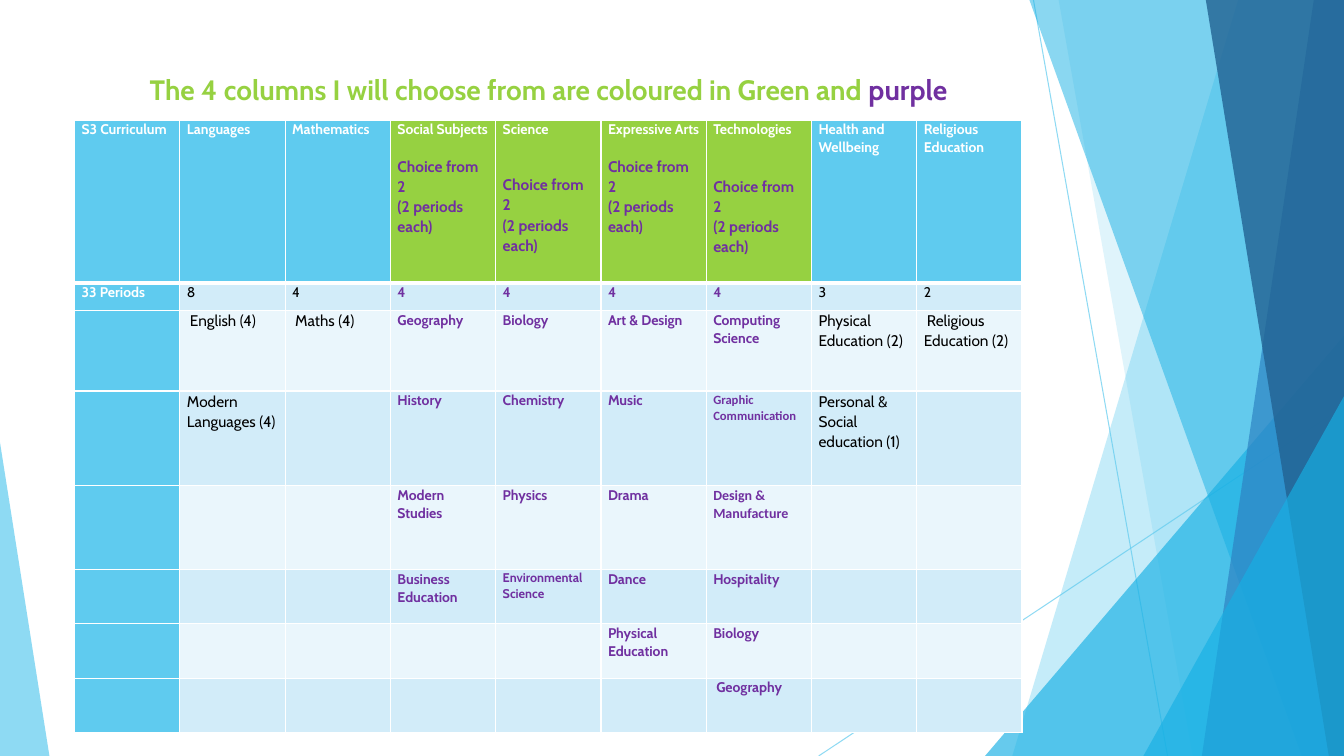
from dataclasses import dataclass

from lxml import etree
from pptx import Presentation
from pptx import util as u
from pptx.dml.color import RGBColor
from pptx.enum import shapes, text
from pptx.oxml.ns import qn

PX = 9144  # EMU per px, 100 px to the inch
SLIDE_W, SLIDE_H = 1333, 750


@dataclass(frozen=True)
class Theme:
    font: str = "Cabin"
    alt_font: str = "Calibri"
    white: str = "FFFFFF"
    black: str = "000000"
    sky: str = "5FCBEF"
    cyan: str = "17B0E4"
    blue: str = "2E83C3"
    navy: str = "226292"
    green: str = "96D141"
    purple: str = "7030A0"
    bands: tuple = ("EAF6FC", "D2ECF9")
    title: int = 20
    body: int = 11
    label: int = 10
    small: int = 9
    spacing: float = 1.07


T = Theme()

LINES = [((1025, 0), (1158, 750)), ((1333, 403), (812, 750))]
# Right-hand panels: top-left x, bottom-left x, colour, opacity in percent
PANELS_BACK = [(1228, 1004, T.sky, 36), (1050, 1183, T.sky, 20)]
PANELS_FRONT = [(1021, 1291, T.cyan, 50), (1303, 1192, T.blue, 70),
                (1196, 1318, T.navy, 80)]

ROW_HEIGHTS = [162, 27, 80, 94, 83, 54, 54, 54]
CHOICE_COLS = range(3, 7)
HEADINGS = ["S3 Curriculum", "Languages", "Mathematics", "Social Subjects", "Science",
            "Expressive Arts", "Technologies", "Health and Wellbeing",
            "Religious Education"]
CHOICE_NOTE = ["Choice from 2", "(2 periods each)"]
CHOICE_GAPS = dict(zip(CHOICE_COLS, [13, 26, 13, 27]))  # points above the note
BODY = [
    ["33 Periods", "8", "4", "4", "4", "4", "4", "3", "2"],
    ["", "English (4)", "Maths (4)", "Geography", "Biology", "Art & Design",
     "Computing Science", "Physical Education (2)", "Religious Education (2)"],
    ["", "Modern Languages (4)", "", "History", "Chemistry", "Music",
     "Graphic Communication", "Personal & Social education (1)", ""],
    ["", "", "", "Modern\nStudies", "Physics", "Drama", "Design & Manufacture", "", ""],
    ["", "", "", "Business Education", "Environmental Science", "Dance", "Hospitality",
     "", ""],
    ["", "", "", "", "", "Physical Education", "Biology", "", ""],
    ["", "", "", "", "", "", "Geography", "", ""],
]
INDENTED = {(2, 1), (2, 2), (2, 8), (7, 6)}
SMALL = {"Graphic Communication", "Environmental Science"}
ALT_FONT = {"Graphic Communication", "Design & Manufacture"}


def px(n):
    return u.Emu(n * PX)


def rgb(code):
    return RGBColor.from_string(code)


def set_alpha(sp, percent):
    for clr in sp.element.iter(qn("a:srgbClr")):
        etree.SubElement(clr, qn("a:alpha")).set("val", str(percent * 1000))


def style_glass(sp, color, alpha):
    """Flat translucent fill without outline or shadow."""
    sp.shadow.inherit = False
    sp.fill.solid()
    sp.fill.fore_color.rgb = rgb(color)
    sp.line.fill.background()
    set_alpha(sp, alpha)


def add_panel(s, top_x, bottom_x, color, alpha):
    """Panel that runs from a slanted left edge to the slide's right edge."""
    fb = s.shapes.build_freeform(top_x, 0, scale=PX)
    fb.add_line_segments([(SLIDE_W, 0), (SLIDE_W, SLIDE_H), (bottom_x, SLIDE_H)])
    style_glass(fb.convert_to_shape(), color, alpha)


def add_triangle(s, x, y, w, h, apex, color, alpha):
    sp = s.shapes.add_shape(shapes.MSO_SHAPE.ISOSCELES_TRIANGLE,
                            px(x), px(y), px(w), px(h))
    sp.adjustments[0] = apex
    style_glass(sp, color, alpha)


def add_thin_line(s, start, end):
    cx = s.shapes.add_connector(shapes.MSO_CONNECTOR.STRAIGHT,
                                *[px(n) for n in (*start, *end)])
    cx.line.color.rgb = rgb(T.sky)
    cx.line.width = u.Pt(0.75)
    set_alpha(cx, 70)
    etree.SubElement(cx.element.spPr, qn("a:effectLst"))


def add_backdrop(s):
    for start, end in LINES:
        add_thin_line(s, start, end)
    for panel in PANELS_BACK:
        add_panel(s, *panel)
    add_triangle(s, 977, 333, 356, 417, 1, T.cyan, 66)
    for panel in PANELS_FRONT:
        add_panel(s, *panel)
    add_triangle(s, 1134, 393, 199, 357, 1, T.cyan, 66)
    add_triangle(s, 0, 439, 49, 311, 0, T.sky, 70)


def set_font(font, size, color, bold=True, name=T.font):
    font.name, font.size, font.bold = name, u.Pt(size), bold
    font.color.rgb = rgb(color)


def add_title(s):
    sp = s.shapes.title
    sp.left, sp.top, sp.width, sp.height = px(74), px(67), px(940), px(144)
    tf = sp.text_frame
    tf.auto_size = text.MSO_AUTO_SIZE.NONE
    tf.vertical_anchor = text.MSO_ANCHOR.TOP
    p = tf.paragraphs[0]
    p.alignment = text.PP_ALIGN.CENTER
    for words, color in [("The 4 columns I will choose from are coloured in Green and ",
                          T.green), ("purple", T.purple)]:
        r = p.add_run()
        r.text = words
        set_font(r.font, T.title, color)


def format_cell(cell, fill, bottom=1):
    """Set margins, white borders (bottom width in points) and fill."""
    cell.margin_left = cell.margin_right = px(7)
    cell.margin_top = cell.margin_bottom = 0
    tcPr = cell._tc.get_or_add_tcPr()
    for side, width in zip("LRTB", (1, 1, 1, bottom)):
        ln = etree.SubElement(tcPr, qn(f"a:ln{side}"), w=str(u.Pt(width)))
        solid = etree.SubElement(ln, qn("a:solidFill"))
        etree.SubElement(solid, qn("a:srgbClr"), val=T.white)
    cell.fill.solid()
    cell.fill.fore_color.rgb = rgb(fill)


def write_lines(tf, lines, size, color, bold=True, name=T.font):
    for line in lines:
        p = tf.paragraphs[0] if not tf.text else tf.add_paragraph()
        p.text = line
        p.line_spacing = T.spacing
        set_font(p.font, size, color, bold, name)


def fill_heading(cell, col):
    is_choice = col in CHOICE_COLS
    format_cell(cell, T.green if is_choice else T.sky, bottom=3)
    tf = cell.text_frame
    write_lines(tf, [HEADINGS[col]], T.label, T.white)
    if is_choice:
        write_lines(tf, CHOICE_NOTE, T.body, T.purple)
        tf.paragraphs[1].space_before = u.Pt(CHOICE_GAPS[col])


def fill_body(cell, row, col, words):
    format_cell(cell, T.sky if col == 0 else T.bands[row % 2])
    if not words:
        return
    bold = col == 0 or col in CHOICE_COLS
    color = T.white if col == 0 else T.purple if bold else T.black
    size = T.small if words in SMALL else T.label if bold or row == 1 else T.body
    name = T.alt_font if words in ALT_FONT else T.font
    write_lines(cell.text_frame, words.split("\n"), size, color, bold, name)
    if (row, col) in INDENTED:
        pPr = cell.text_frame.paragraphs[0]._p.get_or_add_pPr()
        pPr.set("indent", str(px(3)))


def add_curriculum(s):
    frame = s.shapes.add_table(len(ROW_HEIGHTS), len(HEADINGS), px(74), px(119),
                               px(940), px(sum(ROW_HEIGHTS)))
    tbl = frame.table
    tbl.horz_banding = False
    for row, height in zip(tbl.rows, ROW_HEIGHTS):
        row.height = px(height)
    for col in range(len(HEADINGS)):
        fill_heading(tbl.cell(0, col), col)
    for row, entries in enumerate(BODY, 1):
        for col, words in enumerate(entries):
            fill_body(tbl.cell(row, col), row, col, words)


def main():
    prs = Presentation()
    prs.slide_width, prs.slide_height = px(SLIDE_W), px(SLIDE_H)
    s = prs.slides.add_slide(prs.slide_layouts[5])
    add_backdrop(s)
    add_title(s)
    add_curriculum(s)
    prs.save("out.pptx")


if __name__ == "__main__":
    main()
